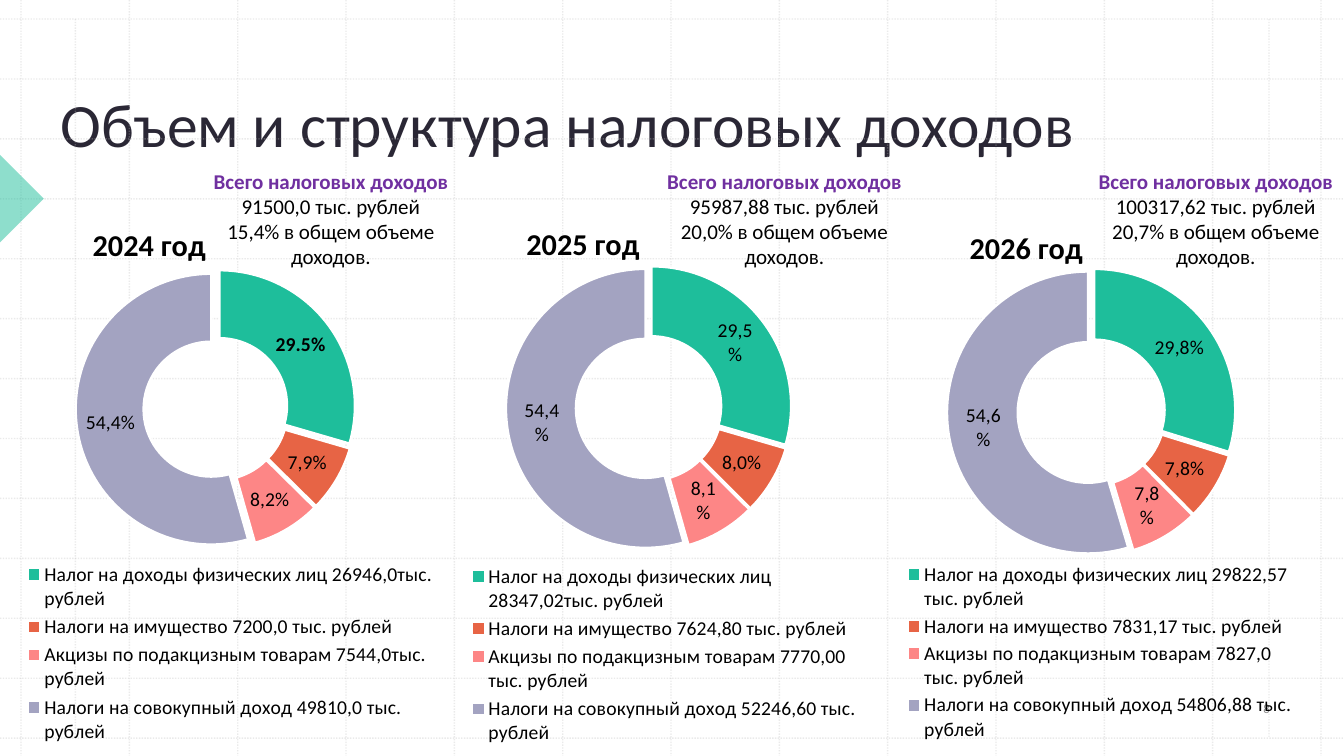
from dataclasses import dataclass

from lxml import etree
from pptx import Presentation
from pptx.chart.data import CategoryChartData
from pptx.dml.color import RGBColor
from pptx.enum.chart import XL_CHART_TYPE as ChartType, XL_LEGEND_POSITION as LegendPosition
from pptx.enum.dml import MSO_LINE_DASH_STYLE as Dash
from pptx.enum.shapes import MSO_CONNECTOR as Connector, MSO_SHAPE as Shape
from pptx.enum.text import MSO_ANCHOR as Anchor, MSO_AUTO_SIZE as AutoSize, PP_ALIGN as Align
from pptx.oxml.ns import qn
from pptx.util import Cm, Pt

WIDTH, HEIGHT = 33.87, 19.05
FONT = "Calibri"
COLORS = {
    "title": "2A2735", "text": "000000", "accent": "7030A0", "number": "8C8C8C",
    "grid": "BCBCBC", "marker": "1EBE9B", "gap": "FFFFFF",
}
TAXES = {
    "Налог на доходы физических лиц": "1EBE9B",
    "Налоги на имущество": "E76445",
    "Акцизы по подакцизным товарам": "FD8686",
    "Налоги на совокупный доход": "A3A3C1",
}


@dataclass
class Year:
    title: str
    series: str
    amounts: tuple
    shares: tuple
    labels: tuple
    frame: tuple
    plot: tuple
    title_place: tuple
    legend_place: tuple
    explosion: int
    total: str
    share: str
    total_left: float


YEARS = [
    Year("2024 год", "2024 год",
         ("26946,0тыс.", "7200,0 тыс.", "7544,0тыс.", "49810,0 тыс."),
         (0.295, 0.079, 0.082, 0.544), (None, "7,9%", "8,2%", "54,4%"),
         (0.41, 4.65, 10.69, 14.4), (0.14, 0.147, 0.661, 0.49),
         (0.167, 0.058), (0.02, 0.655, 0.97, 0.33), 7,
         "91500,0 тыс. рублей", "15,4%", 4.95),
    Year("2025 год", "Series 1",
         ("28347,02тыс.", "7624,80 тыс.", "7770,00 тыс.", "52246,60 тыс."),
         (0.295, 0.08, 0.081, 0.544), ("29,5\n%", "8,0%", "8,1\n%", "54,4\n%"),
         (11.07, 4.65, 11.23, 14.4), (0.15, 0.141, 0.641, 0.5),
         (0.183, 0.056), (0.065, 0.658, 0.88, 0.33), 5,
         "95987,88 тыс. рублей", "20,0%", 16.38),
    Year("2026 год", "Series 1",
         ("29822,57 тыс.", "7831,17 тыс.", "7827,0 тыс.", "54806,88 тыс."),
         (0.298, 0.078, 0.078, 0.546), ("29,8%", "7,8%", "7,8\n%", "54,6\n%"),
         (22.05, 4.83, 11.23, 14.15), (0.162, 0.135, 0.648, 0.515),
         (0.2, 0.052), (0.065, 0.655, 0.88, 0.33), 5,
         "100317,62 тыс. рублей", "20,7%", 27.25),
]


def color(name):
    return RGBColor.from_string(COLORS[name])


def style(font, size, name="text", bold=False):
    font.name, font.size, font.bold = FONT, Pt(size), bold
    font.color.rgb = color(name)


def set_alpha(element, percent):
    fill = next(element.iter(qn("a:srgbClr")))
    etree.SubElement(fill, qn("a:alpha"), val=str(percent * 1000))


def add_grid_line(page, x1, y1, x2, y2):
    line = page.shapes.add_connector(Connector.STRAIGHT, Cm(x1), Cm(y1), Cm(x2), Cm(y2))
    line.line.color.rgb = color("grid")
    line.line.width = Pt(1)
    line.line.dash_style = Dash.ROUND_DOT
    properties = line._element.spPr
    set_alpha(properties, 30)
    etree.SubElement(properties, qn("a:effectLst"))


def add_background(page):
    for step in range(13):
        x, y = 0.53 + 2.73 * step, 0.48 + 1.51 * step
        add_grid_line(page, x, 0, x, HEIGHT)
        add_grid_line(page, 0, y, WIDTH, y)
    for x in (1.9, 31.98):
        add_grid_line(page, x, 0.48, x, 18.57)
    marker = page.shapes.add_shape(Shape.RIGHT_TRIANGLE, Cm(-0.79), Cm(4.22), Cm(1.57), Cm(1.57))
    marker.rotation = 225
    marker.shadow.inherit = False
    marker.fill.solid()
    marker.fill.fore_color.rgb = color("marker")
    set_alpha(marker._element.spPr, 50)
    marker.line.fill.background()


def add_title(page, text):
    title = page.shapes.title
    title.left, title.top, title.width, title.height = Cm(1.27), Cm(0.15), Cm(28.68), Cm(4.01)
    frame = title.text_frame
    frame.text = text
    frame.auto_size = AutoSize.NONE
    frame.vertical_anchor = Anchor.BOTTOM
    frame.paragraphs[0].alignment = Align.LEFT
    style(frame.paragraphs[0].runs[0].font, 44, "title")


def add_text(page, place, lines, size, first_color, first_bold=False):
    box = page.shapes.add_textbox(*map(Cm, place))
    frame = box.text_frame
    frame.word_wrap = True
    frame.text = "\n".join(lines)
    for index, para in enumerate(frame.paragraphs):
        para.alignment = Align.CENTER
        first = index == 0
        style(para.runs[0].font, size, first_color if first else "text", first and first_bold)
    return frame


def place_part(part, index, fractions, inner=False):
    """Set a manual layout, in fractions of the chart area."""
    layout = part.find(qn("c:layout"))
    if layout is None:
        layout = etree.Element(qn("c:layout"))
        part.insert(index, layout)
    for child in list(layout):
        layout.remove(child)
    manual = etree.SubElement(layout, qn("c:manualLayout"))
    if inner:
        etree.SubElement(manual, qn("c:layoutTarget"), val="inner")
    for mode in ("xMode", "yMode"):
        etree.SubElement(manual, qn("c:" + mode), val="edge")
    for key, value in zip("xywh", fractions):
        etree.SubElement(manual, qn("c:" + key), val=str(value))


def format_slices(series, year):
    explosion = etree.Element(qn("c:explosion"), val=str(year.explosion))
    series._element.find(qn("c:tx")).addnext(explosion)
    labels = series.data_labels
    labels.show_value, labels.show_percentage = True, False
    labels.number_format, labels.number_format_is_linked = "0.0%", False
    style(labels.font, 14, bold=True)
    for index, (fill, label) in enumerate(zip(TAXES.values(), year.labels)):
        point = series.points[index]
        point.format.fill.solid()
        point.format.fill.fore_color.rgb = RGBColor.from_string(fill)
        point.format.line.color.rgb = color("gap")
        point.format.line.width = Pt(1.5)
        if label:
            frame = point.data_label.text_frame
            frame.text = label
            for para in frame.paragraphs:
                style(para.runs[0].font, 14)


def add_doughnut(page, year):
    data = CategoryChartData(number_format="0.0%")
    data.categories = [f"{tax} {amount} рублей" for tax, amount in zip(TAXES, year.amounts)]
    data.add_series(year.series, year.shares)
    chart = page.shapes.add_chart(ChartType.DOUGHNUT, *map(Cm, year.frame), data).chart
    style(chart.font, 18)
    # Title and legend
    chart.has_title = True
    heading = chart.chart_title
    heading.text_frame.text = year.title
    style(heading.text_frame.paragraphs[0].runs[0].font, 21.6, bold=True)
    chart.has_legend = True
    legend = chart.legend
    legend.position = LegendPosition.BOTTOM
    legend.include_in_layout = False
    style(legend.font, 14)
    # Ring
    chart.plots[0].vary_by_categories = True
    format_slices(chart.plots[0].series[0], year)
    place_part(heading._element, 1, year.title_place)
    place_part(legend._element, 1, year.legend_place)
    place_part(next(chart._chartSpace.iter(qn("c:plotArea"))), 0, year.plot, inner=True)


def main():
    deck = Presentation()
    deck.slide_width, deck.slide_height = Cm(WIDTH), Cm(HEIGHT)
    page = deck.slides.add_slide(deck.slide_layouts[5])
    add_background(page)
    add_title(page, "Объем и структура налоговых доходов")
    number = add_text(page, (30.56, 17.27, 2.72, 1.17), ["8"], 9, "number")
    number.vertical_anchor = Anchor.MIDDLE
    # One ring per year, then the totals above them
    for year in YEARS:
        add_doughnut(page, year)
    for year in YEARS:
        lines = ["Всего налоговых доходов", year.total, f"{year.share} в общем объеме доходов."]
        add_text(page, (year.total_left, 4.11, 6.78, 3.45), lines, 15, "accent", first_bold=True)
    deck.save("out.pptx")


if __name__ == "__main__":
    main()
